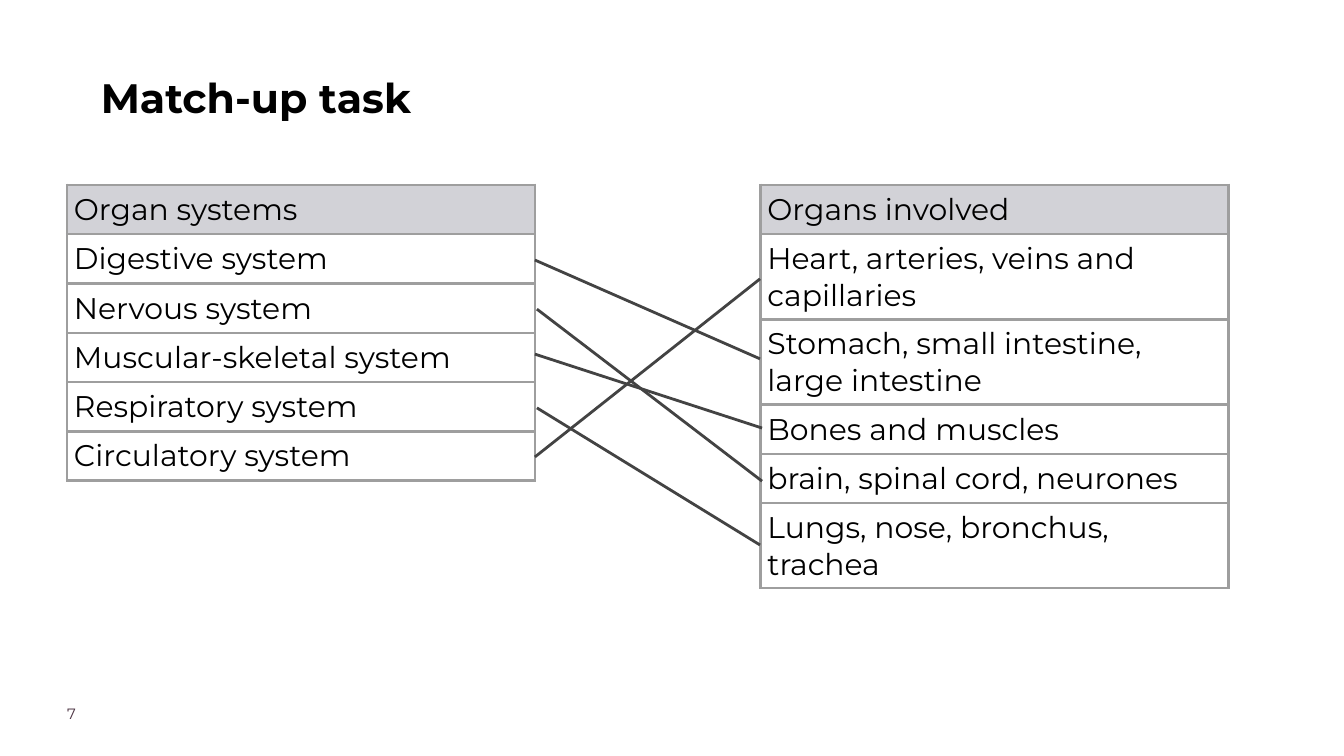
from lxml import etree
from pptx import Presentation, util as u
from pptx.dml.color import RGBColor
from pptx.enum import shapes
from pptx.oxml import ns

# Content
TITLE = "Match-up task"
PAGE = "7"
SYSTEMS = ["Organ systems", "Digestive system", "Nervous system",
           "Muscular-skeletal system", "Respiratory system", "Circulatory system"]
ORGANS = ["Organs involved", "Heart, arteries, veins and capillaries",
          "Stomach, small intestine, large intestine", "Bones and muscles",
          "brain, spinal cord, neurones", "Lungs, nose, bronchus, trachea"]
# Each match: start and end point, from a system to its organs
MATCHES = [((7.96, 3.87), (11.31, 5.34)),
           ((7.99, 4.6), (11.34, 7.16)),
           ((7.96, 5.27), (11.34, 6.37)),
           ((7.99, 6.07), (11.31, 8.11)),
           ((7.96, 6.8), (11.31, 4.15))]

THEME = dict(font="Montserrat", ink="000000", page="4B3241", header="D2D2D7",
             border="9E9E9E", match="434343", line=3,
             title_size=44, cell_size=32, page_size=16)
LEFT, RIGHT, TABLE_TOP = 1, 11.32, 2.75
COLUMN, ROW, PAD = 6.96, 0.42, 0.1


def write(frame, words, size, color=THEME["ink"], bold=False, spacing=None, indent=None):
    frame.word_wrap = True
    paragraph = frame.paragraphs[0]
    if indent:
        paragraph._p.get_or_add_pPr().set("indent", str(u.Inches(indent)))
    if spacing:
        paragraph.line_spacing = spacing
    run = paragraph.add_run()
    run.text = words
    run.font.name = THEME["font"]
    run.font.size = u.Pt(size)
    run.font.bold = bold
    run.font.color.rgb = RGBColor.from_string(color)


def add_label(slide, box, words, **style):
    frame = slide.shapes.add_textbox(*map(u.Inches, box)).text_frame
    frame.margin_left = frame.margin_right = frame.margin_top = frame.margin_bottom = 0
    write(frame, words, **style)


def add_borders(cell):
    properties = cell._tc.get_or_add_tcPr()
    for side in ("a:lnL", "a:lnR", "a:lnT", "a:lnB"):
        edge = etree.SubElement(properties, ns.qn(side), w=str(u.Pt(THEME["line"])))
        fill = etree.SubElement(edge, ns.qn("a:solidFill"))
        etree.SubElement(fill, ns.qn("a:srgbClr"), val=THEME["border"])


def add_list(slide, left, entries):
    table = slide.shapes.add_table(len(entries), 1, *map(
        u.Inches, (left, TABLE_TOP, COLUMN, ROW * len(entries)))).table
    table.first_row = table.horz_banding = False
    for index, entry in enumerate(entries):
        table.rows[index].height = u.Inches(ROW)  # rows grow to fit their text
        cell = table.cell(index, 0)
        cell.margin_left = cell.margin_right = u.Inches(PAD)
        cell.margin_top = cell.margin_bottom = u.Inches(PAD)
        write(cell.text_frame, entry, size=THEME["cell_size"])
        add_borders(cell)
        if index == 0:
            cell.fill.solid()
            cell.fill.fore_color.rgb = RGBColor.from_string(THEME["header"])
        else:
            cell.fill.background()


def add_match(slide, start, end):
    match = slide.shapes.add_connector(
        shapes.MSO_CONNECTOR.STRAIGHT, *map(u.Inches, start + end))
    match.line.color.rgb = RGBColor.from_string(THEME["match"])
    match.line.width = u.Pt(THEME["line"])
    etree.SubElement(match._element.spPr, ns.qn("a:effectLst"))


def main():
    deck = Presentation()
    deck.slide_width, deck.slide_height = u.Inches(20), u.Inches(11.25)
    slide = deck.slides.add_slide(deck.slide_layouts[6])

    # Title and page number
    add_label(slide, (LEFT, 0.97, 14.44, 1.78), TITLE,
              size=THEME["title_size"], bold=True, spacing=1.15, indent=0.5)
    add_label(slide, (LEFT, 10.48, 1.57, 0.39), PAGE,
              size=THEME["page_size"], color=THEME["page"])

    # The two lists and the lines that match them
    add_list(slide, LEFT, SYSTEMS)
    add_list(slide, RIGHT, ORGANS)
    for start, end in MATCHES:
        add_match(slide, start, end)

    deck.save("out.pptx")


if __name__ == "__main__":
    main()
